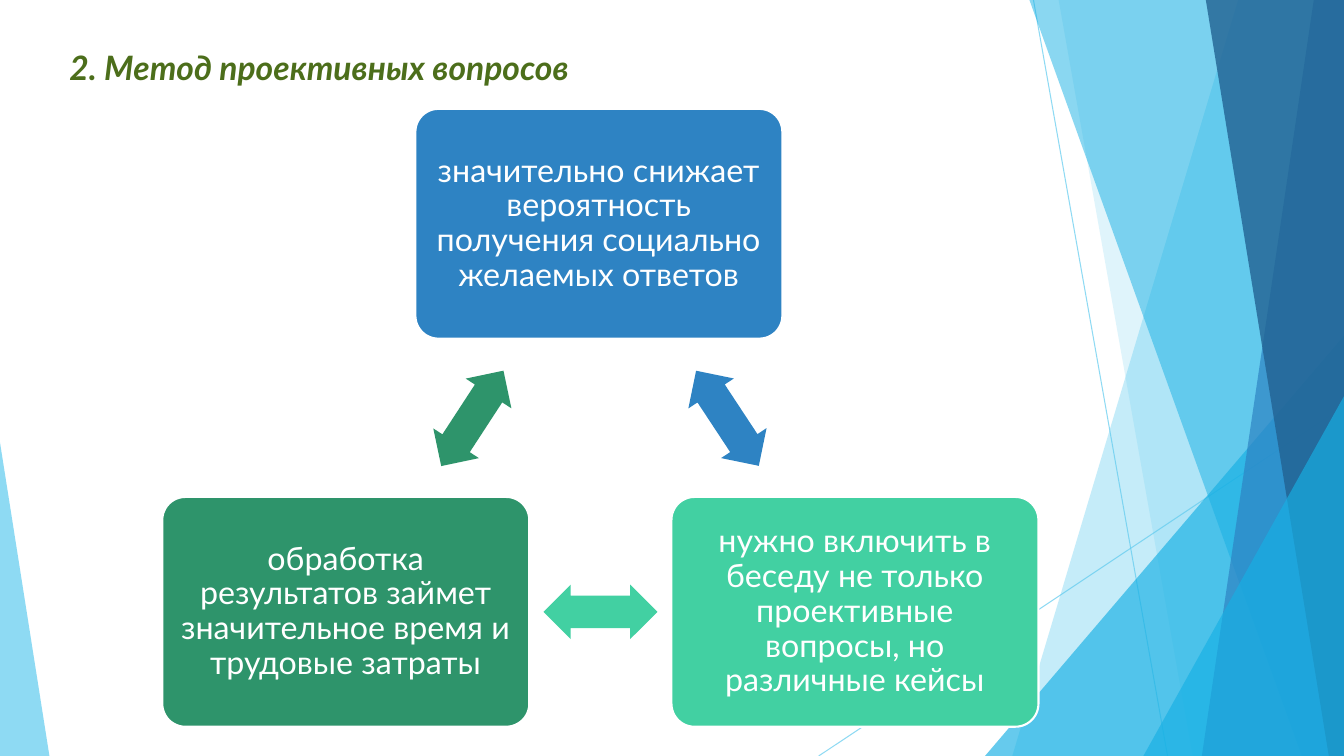
from lxml import etree
from pptx import Presentation
from pptx.dml.color import RGBColor
from pptx.enum import shapes, text
from pptx.oxml import ns
from pptx.util import Inches, Pt

WHITE = RGBColor(0xFF, 0xFF, 0xFF)
OLIVE = RGBColor(0x4C, 0x6E, 0x1B)
SKY = RGBColor(0x5F, 0xCB, 0xEF)
CYAN = RGBColor(0x17, 0xB0, 0xE4)
BLUE = RGBColor(0x2E, 0x83, 0xC3)
NAVY = RGBColor(0x22, 0x62, 0x92)
MINT = RGBColor(0x42, 0xD0, 0xA2)
GREEN = RGBColor(0x2E, 0x94, 0x6B)

WIDTH, HEIGHT = 13.33, 7.5
CARD_SIZE = (3.64, 2.28)
ARROW_SIZE = (1.13, 0.54)

# Start, end
RAYS = [((10.25, 0), (11.58, HEIGHT)), ((WIDTH, 4.03), (8.12, HEIGHT))]

# Left edge at top, left edge at bottom, colour, opacity; all reach the right edge
BANDS_BEHIND = [(12.28, 10.04, SKY, 36), (10.5, 11.83, SKY, 20)]
BANDS_FRONT = [
    (10.21, 12.91, CYAN, 50),
    (13.03, 11.92, BLUE, 70),
    (11.96, 13.18, NAVY, 80),
]

# Card left, top, colour, wording; arrow left, top, rotation
CYCLE = [
    (4.12, 1.08, BLUE,
     "значительно снижает вероятность получения социально желаемых ответов",
     6.65, 3.88, 56.6),
    (6.66, 4.93, MINT,
     "нужно включить в беседу не только проективные вопросы, но различные кейсы",
     5.39, 5.8, 180),
    (1.61, 4.93, GREEN,
     "обработка результатов займет значительное время и трудовые затраты",
     4.12, 3.88, 303.1),
]


class SlideBuilder:
    def __init__(self, slide, font):
        self.slide = slide
        self.font = font

    def set_opacity(self, shape, percent):
        for color in shape._element.spPr.iter(ns.qn("a:srgbClr")):
            alpha = etree.SubElement(color, ns.qn("a:alpha"))
            alpha.set("val", str(percent * 1000))

    def paint(self, shape, color, opacity=100):
        """Give a flat fill with no outline or shadow."""
        shape.shadow.inherit = False
        shape.fill.solid()
        shape.fill.fore_color.rgb = color
        shape.line.fill.background()
        if opacity < 100:
            self.set_opacity(shape, opacity)

    def preset(self, kind, left, top, size, color, adjustments, opacity=100):
        shape = self.slide.shapes.add_shape(
            kind, Inches(left), Inches(top), *map(Inches, size))
        for index, value in enumerate(adjustments):
            shape.adjustments[index] = value
        self.paint(shape, color, opacity)
        return shape

    def ray(self, start, end):
        line = self.slide.shapes.add_connector(
            shapes.MSO_CONNECTOR.STRAIGHT, *map(Inches, start + end))
        line.line.color.rgb = SKY
        line.line.width = Pt(0.75)
        self.set_opacity(line, 70)
        etree.SubElement(line._element.spPr, ns.qn("a:effectLst"))

    def band(self, top_left, bottom_left, color, opacity):
        corners = [(WIDTH, 0), (WIDTH, HEIGHT), (bottom_left, HEIGHT)]
        outline = self.slide.shapes.build_freeform(Inches(top_left), 0)
        outline.add_line_segments(
            [(Inches(x), Inches(y)) for x, y in corners], close=True)
        self.paint(outline.convert_to_shape(), color, opacity)

    def triangle(self, left, top, width, apex, color, opacity):
        """Stand a triangle on the bottom edge of the slide."""
        self.preset(shapes.MSO_SHAPE.ISOSCELES_TRIANGLE, left, top,
                    (width, HEIGHT - top), color, [apex], opacity)

    def set_text(self, frame, wording, size, color, align):
        frame.word_wrap = True
        para = frame.paragraphs[0]
        para.text = wording
        para.alignment = align
        para.font.name = self.font
        para.font.size = Pt(size)
        para.font.color.rgb = color
        return para

    def title(self, wording):
        box = self.slide.shapes.add_textbox(
            Inches(0.59), Inches(0.42), Inches(5.74), Inches(0.5))
        para = self.set_text(box.text_frame, wording, 24, OLIVE, text.PP_ALIGN.LEFT)
        para.font.bold = para.font.italic = True

    def card(self, left, top, color, wording):
        card = self.preset(shapes.MSO_SHAPE.ROUNDED_RECTANGLE,
                           left, top, CARD_SIZE, color, [0.1])
        card.line.color.rgb = WHITE
        card.line.width = Pt(1.5)
        frame = card.text_frame
        frame.vertical_anchor = text.MSO_ANCHOR.MIDDLE
        frame.margin_left = frame.margin_right = Inches(0.1)
        frame.margin_top = frame.margin_bottom = Inches(0.1)
        para = self.set_text(frame, wording, 23, WHITE, text.PP_ALIGN.CENTER)
        para.line_spacing = 0.9

    def arrow(self, left, top, rotation, color):
        arrow = self.preset(shapes.MSO_SHAPE.LEFT_RIGHT_ARROW,
                            left, top, ARROW_SIZE, color, [0.6, 0.5])
        arrow.rotation = rotation


def main():
    deck = Presentation()
    deck.slide_width, deck.slide_height = Inches(WIDTH), Inches(HEIGHT)
    page = SlideBuilder(deck.slides.add_slide(deck.slide_layouts[6]), "Lato")

    for start, end in RAYS:
        page.ray(start, end)
    for band in BANDS_BEHIND:
        page.band(*band)
    page.triangle(9.77, 3.33, 3.56, 1, CYAN, 66)
    for band in BANDS_FRONT:
        page.band(*band)
    page.triangle(11.34, 3.93, 1.99, 1, CYAN, 66)
    page.triangle(0, 4.39, 0.49, 0, SKY, 70)

    page.title("2. Метод проективных вопросов")
    for left, top, color, wording, arrow_left, arrow_top, rotation in CYCLE:
        page.card(left, top, color, wording)
        page.arrow(arrow_left, arrow_top, rotation, color)

    deck.save("out.pptx")


if __name__ == "__main__":
    main()
